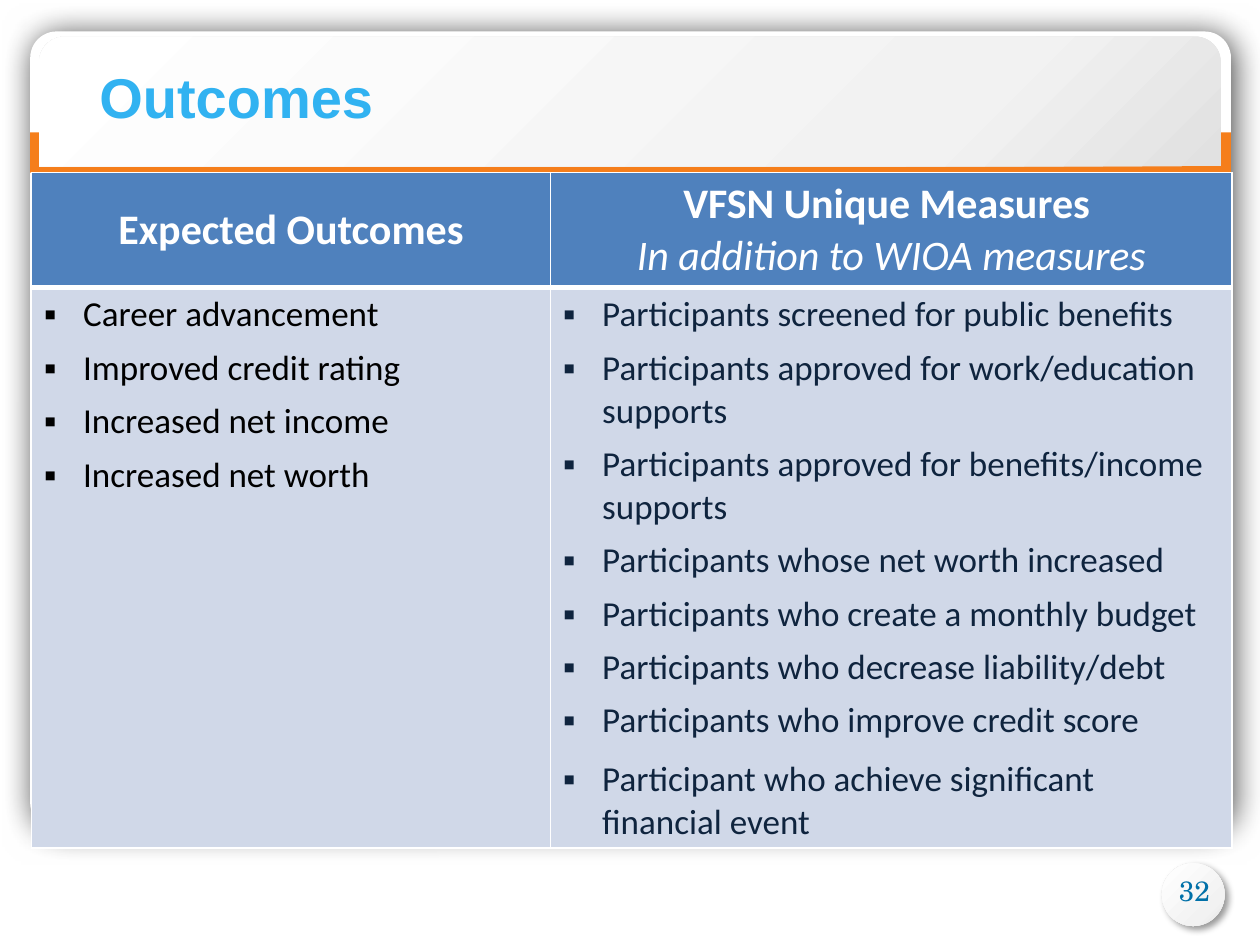
from copy import deepcopy
from dataclasses import dataclass

from lxml import etree
from pptx import Presentation
from pptx.dml.color import RGBColor
from pptx.enum.shapes import MSO_SHAPE
from pptx.enum.text import MSO_ANCHOR, PP_ALIGN
from pptx.oxml.ns import qn
from pptx.util import Inches, Pt

ROUND = MSO_SHAPE.ROUNDED_RECTANGLE
ROUND_TOP = MSO_SHAPE.ROUND_2_SAME_RECTANGLE
RECT = MSO_SHAPE.RECTANGLE
CENTER = PP_ALIGN.CENTER
MIDDLE = MSO_ANCHOR.MIDDLE


@dataclass(frozen=True)
class Theme:
    """Colours, fonts and type sizes of the deck."""
    white: str = "FFFFFF"
    black: str = "000000"
    navy: str = "0F243E"
    orange: str = "F57E1B"
    title: str = "31B2F1"
    number: str = "0070A8"
    header: str = "4F81BD"
    body: str = "D0D8E8"
    silver: tuple = ((0, "E1E1E1"), (0.24, "F2F2F2"), (0.99, "FFFFFF"))
    title_font: str = "Arial"
    table_font: str = "Calibri"
    number_font: str = "TeX Gyre Schola"
    title_size: int = 32
    header_size: int = 24
    body_size: int = 20
    number_size: int = 16


T = Theme()
EXPECTED = ["Career advancement", "Improved credit rating",
            "Increased net income", "Increased net worth"]
MEASURES = ["Participants screened for public benefits",
            "Participants approved for work/education supports",
            "Participants approved for benefits/income supports",
            "Participants whose net worth increased",
            "Participants who create a monthly budget",
            "Participants who decrease liability/debt",
            "Participants who improve credit score",
            "Participant who achieve significant financial event"]


def rgb(color):
    """Turn a hex string into a colour."""
    return RGBColor.from_string(color)


def inches(box):
    """Turn a box of numbers into lengths."""
    return [Inches(v) for v in box]


def write(p, text, font, size, color, bold=False, italic=False, align=None):
    """Add one formatted run to a paragraph."""
    p.alignment = align
    r = p.add_run()
    r.text = text
    r.font.name, r.font.size = font, Pt(size)
    r.font.bold, r.font.italic = bold, italic
    r.font.color.rgb = rgb(color)


def add_shadow(sp, alpha, blur, dist, angle=45):
    """Give a shape an outer shadow."""
    effects = sp._element.spPr.find(qn("a:effectLst"))
    shadow = etree.SubElement(effects, qn("a:outerShdw"), blurRad=str(Pt(blur)),
                              dist=str(Pt(dist)), dir=str(angle * 60000),
                              algn="tl", rotWithShape="0")
    color = etree.SubElement(shadow, qn("a:srgbClr"), val=T.black)
    etree.SubElement(color, qn("a:alpha"), val=str(alpha * 1000))


def add_panel(s, kind, box, fill, adjust=(), shadow=None):
    """Add a borderless shape with a solid or gradient fill."""
    sp = s.shapes.add_shape(kind, *inches(box))
    for i, value in enumerate(adjust):
        sp.adjustments[i] = value
    sp.line.fill.background()
    if isinstance(fill, str):
        sp.fill.solid()
        sp.fill.fore_color.rgb = rgb(fill)
    else:
        sp.fill.gradient()
        sp.fill.gradient_angle = 135
        stops = sp._element.spPr.find(".//" + qn("a:gsLst"))
        stops.append(deepcopy(stops[0]))
        for stop, (position, color) in zip(sp.fill.gradient_stops, fill):
            stop.position = position
            stop.color.rgb = rgb(color)
    sp.shadow.inherit = False
    if shadow:
        add_shadow(sp, *shadow)


def add_frame(s, box):
    """Draw the card with its orange band and silver title panel."""
    x, y, w, h = box
    add_panel(s, ROUND, box, T.white, (0.033,), (72, 18, 3))
    add_panel(s, RECT, (x, y + 0.8, w, 0.32), T.orange)
    add_panel(s, ROUND_TOP, (x + 0.07, y + 0.04, w - 0.15, 1.03), T.silver, (0.2, 0))


def add_title(s, box, text):
    """Write the slide title."""
    tf = s.shapes.add_textbox(*inches(box)).text_frame
    tf.word_wrap = True
    tf.paragraphs[0].line_spacing = 0.9
    write(tf.paragraphs[0], text, T.title_font, T.title_size, T.title, bold=True)


def add_page_number(s, box, text):
    """Draw the round badge with the page number."""
    x, y, w, h = box
    add_panel(s, ROUND, box, T.silver, (0.5,), (40, 4, 3))
    tf = s.shapes.add_textbox(*inches((x - 0.11, y + 0.08, w + 0.24, 0.33))).text_frame
    tf.word_wrap = True
    tf.margin_top = 0
    write(tf.paragraphs[0], text, T.number_font, T.number_size, T.number, align=CENTER)


def style_cell(cell, fill, top=1, bottom=1):
    """Set the white borders and the fill of a cell."""
    tcPr = cell._tc.get_or_add_tcPr()
    for side, width in (("L", 1), ("R", 1), ("T", top), ("B", bottom)):
        ln = etree.SubElement(tcPr, qn("a:ln" + side), w=str(Pt(width)))
        solid = etree.SubElement(ln, qn("a:solidFill"))
        etree.SubElement(solid, qn("a:srgbClr"), val=T.white)
    cell.fill.solid()
    cell.fill.fore_color.rgb = rgb(fill)


def paragraphs(tf, count):
    """Return the given number of paragraphs of a new text frame."""
    return [tf.paragraphs[0]] + [tf.add_paragraph() for _ in range(count - 1)]


def fill_header(cell, lines):
    """Write a bold heading and an optional italic second line."""
    style_cell(cell, T.header, bottom=3)
    cell.vertical_anchor = MIDDLE
    for i, p in enumerate(paragraphs(cell.text_frame, len(lines))):
        write(p, lines[i], T.table_font, T.header_size, T.white,
              bold=i == 0, italic=i > 0, align=CENTER)


def fill_bullets(cell, items, color, level=0):
    """Write a list with square bullets."""
    style_cell(cell, T.body, top=3)
    for p, text in zip(paragraphs(cell.text_frame, len(items)), items):
        p.level = level
        p.space_after = Pt(6)
        pPr = p._p.get_or_add_pPr()
        pPr.set("marL", str(Inches(0.31)))
        pPr.set("indent", str(-Inches(0.31)))
        etree.SubElement(pPr, qn("a:buFont"), typeface=T.table_font)
        etree.SubElement(pPr, qn("a:buChar"), char="▪")
        write(p, text, T.table_font, T.body_size, color)


def add_outcomes(s, box, widths, heights):
    """Build the table of outcomes and measures."""
    table = s.shapes.add_table(2, 2, *inches(box)).table
    for col, width in zip(table.columns, inches(widths)):
        col.width = width
    for row, height in zip(table.rows, inches(heights)):
        row.height = height
    fill_header(table.cell(0, 0), ["Expected Outcomes"])
    fill_header(table.cell(0, 1), ["VFSN Unique Measures ", "In addition to WIOA measures"])
    fill_bullets(table.cell(1, 0), EXPECTED, T.black)
    fill_bullets(table.cell(1, 1), MEASURES, T.navy, level=1)
    last = table.cell(1, 1).text_frame.paragraphs[-1]
    last.space_before = last.space_after = Pt(3)


def main():
    """Build the slide and save it."""
    prs = Presentation()
    prs.slide_width, prs.slide_height = Inches(10), Inches(7.5)
    s = prs.slides.add_slide(prs.slide_layouts[6])
    add_frame(s, (0.24, 0.25, 9.53, 6.33))
    add_page_number(s, (9.22, 6.85, 0.5, 0.5), "32")
    add_title(s, (0.69, 0.51, 5.86, 0.59), "Outcomes")
    add_outcomes(s, (0.25, 1.37, 9.53, 5.36), (4.12, 5.41), (0.91, 4.45))
    prs.save("out.pptx")


if __name__ == "__main__":
    main()
